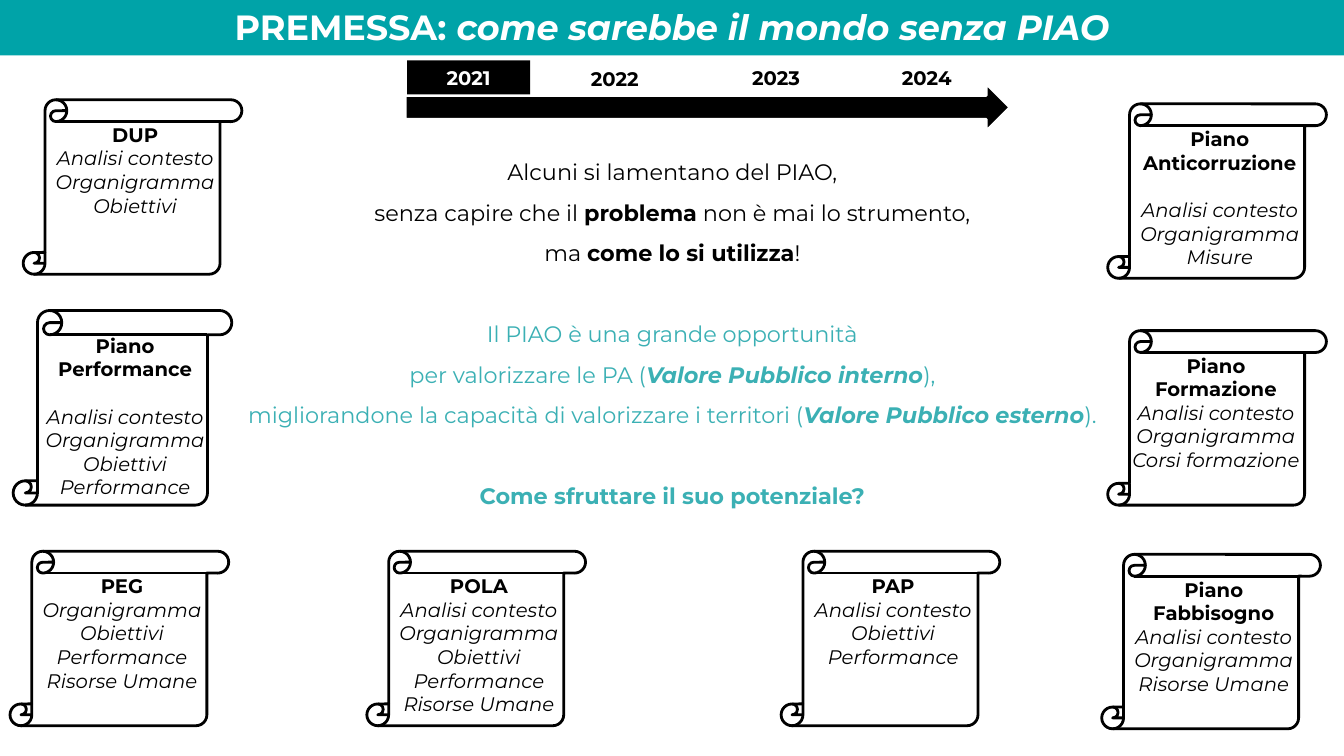
import pptx
import pptx.dml.color
import pptx.enum.shapes
import pptx.enum.text
import pptx.util

Pt = pptx.util.Pt
RGB = pptx.dml.color.RGBColor
SHAPE = pptx.enum.shapes.MSO_SHAPE
ANCHOR = pptx.enum.text.MSO_ANCHOR
CENTER = pptx.enum.text.PP_ALIGN.CENTER

BLACK = RGB(0x00, 0x00, 0x00)
WHITE = RGB(0xFF, 0xFF, 0xFF)
BANNER = RGB(0x00, 0xA3, 0xA8)
TEAL = RGB(0x3B, 0xB0, 0xB4)

BOLD = {"bold": True}
ITALIC = {"italic": True}
BOLD_ITALIC = {"bold": True, "italic": True}
SMALL_LINE = 17.07  # height of a 14 pt text line
BODY_LINE = 29.3    # height of a 16 pt text line at 1.5 spacing

ANALYSIS, CHART, GOALS = "Analisi contesto", "Organigramma", "Obiettivi"
PERFORMANCE, STAFF = "Performance", "Risorse Umane"

# left, top, height, title, gap below title (lines), contents, text shift
SCROLLS = [
    (791.3, 74.2, 124.6, "Piano Anticorruzione", 1, [ANALYSIS, CHART, "Misure"], 0),
    (9.4, 221.8, 139, "Piano Performance", 1, [ANALYSIS, CHART, GOALS, PERFORMANCE], 0),
    (7.2, 393.8, 124.6, "PEG", 0, [CHART, GOALS, PERFORMANCE, STAFF], 0),
    (791.3, 236.2, 124.6, "Piano Formazione", 0, [ANALYSIS, CHART, "Corsi formazione"], -2.7),
    (16.6, 71.3, 124.6, "DUP", 0, [ANALYSIS, CHART, GOALS], 0),
    (262.1, 393.8, 124.6, "POLA", 0, [ANALYSIS, CHART, GOALS, PERFORMANCE, STAFF], 0),
    (787, 396, 124.6, "Piano Fabbisogno", 0, [ANALYSIS, CHART, STAFF], 0),
    (558, 393.8, 124.6, "PAP", 0, [ANALYSIS, GOALS, PERFORMANCE], 0),
]

# runs, colour, space before
MESSAGE = [
    ([("Alcuni si lamentano del PIAO,", {})], BLACK, 0),
    ([("senza capire che il ", {}), ("problema", BOLD),
      (" non è mai lo strumento,", {})], BLACK, 0),
    ([("ma ", {}), ("come lo si utilizza", BOLD), ("!", {})], BLACK, 0),
    ([("Il PIAO è una grande opportunità", {})], TEAL, BODY_LINE),
    ([("per valorizzare le PA (", {}), ("Valore Pubblico interno", BOLD_ITALIC),
      ("),", {})], TEAL, 0),
    ([("migliorandone la capacità di valorizzare i territori (", {}),
      ("Valore Pubblico esterno", BOLD_ITALIC), (").", {})], TEAL, 0),
    ([("Come sfruttare il suo potenziale?", BOLD)], TEAL, BODY_LINE),
]

# year, left, top, width
YEARS = [("2024", 620.6, 43.2, 82.8), ("2023", 514.1, 43.2, 80.6), ("2022", 398.9, 43.9, 80.6)]


class Deck:
    font = "Montserrat"

    def __init__(self, prs):
        self.s = prs.slides.add_slide(prs.slide_layouts[6])

    def shape(self, kind, box, fill=None, line=None, parent=None):
        sp = (parent or self.s).shapes.add_shape(kind, *map(Pt, box))
        sp.shadow.inherit = False
        for part, color in ((sp.fill, fill), (sp.line.fill, line)):
            if color is None:
                part.background()
            else:
                part.solid()
                part.fore_color.rgb = color
        if line is not None:
            sp.line.width = Pt(2)
        return sp

    def text_box(self, box, parent=None):
        return (parent or self.s).shapes.add_textbox(*map(Pt, box))

    def set_text(self, sp, paragraphs, size, spacing=1.0, anchor=ANCHOR.TOP):
        """Fill sp with paragraphs given as (runs, colour, space before)."""
        tf = sp.text_frame
        tf.word_wrap = True
        tf.vertical_anchor = anchor
        for i, (runs, color, before) in enumerate(paragraphs):
            p = tf.add_paragraph() if i else tf.paragraphs[0]
            layout = {"alignment": CENTER, "line_spacing": spacing, "space_before": Pt(before)}
            for key, value in layout.items():
                setattr(p, key, value)
            for text, style in runs:
                r = p.add_run()
                r.text = text
                for key, value in {"name": self.font, "size": Pt(size), **style}.items():
                    setattr(r.font, key, value)
                r.font.color.rgb = color

    def scroll(self, left, top, height, title, gap, contents, shift):
        group = self.s.shapes.add_group_shape()
        lines = len(title.split()) + gap + len(contents)
        sp = self.text_box((left + 12 + shift, top + 12.9, 136, 7.2 + lines * SMALL_LINE), group)
        paragraphs = [([(title, BOLD)], BLACK, 0)]
        for i, item in enumerate(contents):
            paragraphs.append(([(item, ITALIC)], BLACK, 0 if i else gap * SMALL_LINE))
        self.set_text(sp, paragraphs, 14)
        self.shape(SHAPE.VERTICAL_SCROLL, (left, top, 156.2, height), line=BLACK, parent=group)

    def year(self, text, left, top, width):
        sp = self.text_box((left, top, width, 24.3))
        self.set_text(sp, [([(text, BOLD)], BLACK, 0)], 14)


def main():
    prs = pptx.Presentation()
    prs.slide_width, prs.slide_height = Pt(960), Pt(540)
    deck = Deck(prs)

    banner = deck.shape(SHAPE.RECTANGLE, (0, -2.2, 960, 41.8), fill=BANNER)
    title = [("PREMESSA: ", BOLD), ("come sarebbe il mondo senza PIAO", BOLD_ITALIC)]
    deck.set_text(banner, [(title, WHITE, 0)], 25, anchor=ANCHOR.MIDDLE)

    for scroll in SCROLLS:
        deck.scroll(*scroll)

    deck.shape(SHAPE.RIGHT_ARROW, (289.4, 59.8, 432, 33.8), fill=BLACK, line=WHITE)
    for year in YEARS:
        deck.year(*year)
    current = deck.shape(SHAPE.RECTANGLE, (290.9, 43.2, 87.8, 24.3), fill=BLACK)
    deck.set_text(current, [([("2021", BOLD)], WHITE, 0)], 14)

    message = deck.text_box((157, 100.1, 646.6, 265.7))
    deck.set_text(message, MESSAGE, 16, spacing=1.5)

    prs.save("out.pptx")


if __name__ == "__main__":
    main()
